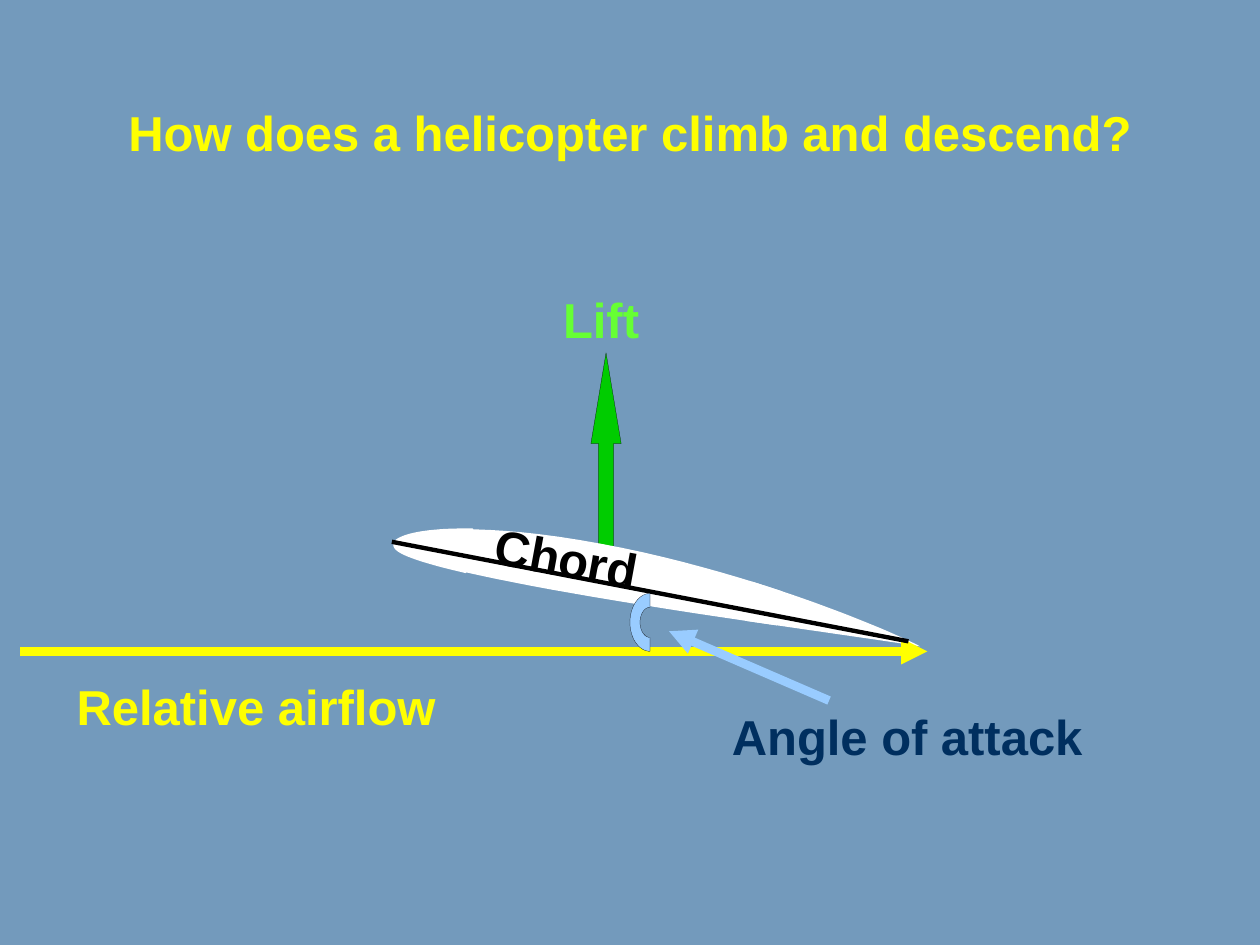
import math

import pptx
import pptx.util
import pptx.dml.color
import pptx.enum.shapes
import pptx.enum.text
import pptx.oxml
import pptx.oxml.ns

Inches = pptx.util.Inches
Pt = pptx.util.Pt
RGBColor = pptx.dml.color.RGBColor
MSO_SHAPE = pptx.enum.shapes.MSO_SHAPE

SKY = RGBColor(0x73, 0x9A, 0xBC)
YELLOW = RGBColor(0xFF, 0xFF, 0x00)
GREEN = RGBColor(0x00, 0xCC, 0x00)
LIME = RGBColor(0x66, 0xFF, 0x33)
WHITE = RGBColor(0xFF, 0xFF, 0xFF)
BLACK = RGBColor(0x00, 0x00, 0x00)
PALE_BLUE = RGBColor(0x99, 0xCC, 0xFF)
NAVY = RGBColor(0x00, 0x2F, 0x5F)

TITLE = "How does a helicopter climb and descend?"
LABEL_HEIGHT = 0.57
HAIRLINE = 0.1
LABELS = [
    ("Relative airflow", 0.51, 5.32, 3.23, YELLOW, 0),
    ("Angle of attack", 5.71, 5.56, 3.78, NAVY, 0),
    ("Chord", 3.82, 4.22, 2.2, BLACK, 10.4),
    ("Lift", 4.37, 2.25, 1.18, LIME, 0),
]
LINES = {
    "airflow": ((0.16, 5.17), (7.36, 5.17), YELLOW, 5, True),
    "chord": ((3.11, 4.3), (7.21, 5.09), BLACK, 2.5, False),
    "angle pointer": ((6.58, 5.56), (5.31, 5.01), PALE_BLUE, 5, True),
}

WING_ANGLE = 9.1
LEADING_EDGE = (3.13, 4.31)
WING_LENGTH = 4.25
TRAILING_DROP = 0.15
UPPER_SURFACE = {"scale": -0.88, "nose_power": 0.62, "tail_power": 0.92}
LOWER_SURFACE = {"scale": 0.28, "nose_power": 0.35, "tail_power": 1.15}
TAIL_SPAN = (0.67, 1)
MIDDLE_SPAN = (0.11, 0.73)
NOSE_SPAN = (0, 0.14)
WING_PARTS = [
    (TAIL_SPAN, {"fill": WHITE}),
    (MIDDLE_SPAN, {"fill": WHITE}),
    (NOSE_SPAN, {"fill": WHITE}),
    (NOSE_SPAN, {"line": WHITE, "width": 1}),
]

ARC_CENTER = (5.16, 4.94)
ARC_OUTER_RADII = (0.16, 0.23)
ARC_INNER_RADII = (0.08, 0.12)
CURVE_STEPS = 24


def paint(shape, fill=None, line=None, width=HAIRLINE):
    shape.shadow.inherit = False
    if fill is None:
        shape.fill.background()
    else:
        shape.fill.solid()
        shape.fill.fore_color.rgb = fill
    if line is None:
        shape.line.fill.background()
    else:
        shape.line.color.rgb = line
        shape.line.width = Pt(width)


def box(left, top, width, height):
    return [Inches(value) for value in (left, top, width, height)]


def write(shape, text, color):
    frame = shape.text_frame
    frame.text = text
    frame.word_wrap = True
    frame.auto_size = pptx.enum.text.MSO_AUTO_SIZE.SHAPE_TO_FIT_TEXT
    frame.vertical_anchor = pptx.enum.text.MSO_ANCHOR.TOP
    paragraph = frame.paragraphs[0]
    paragraph.space_before = Pt(0)
    font = paragraph.runs[0].font
    font.name, font.size, font.bold = "Arial", Pt(28), True
    font.color.rgb = color


def drawing_element(markup):
    namespace = pptx.oxml.ns.nsdecls("a")
    return pptx.oxml.parse_xml(f"<a:{markup} {namespace}/>")


def add_line(shapes, start, end, color, width, has_arrowhead):
    connector = shapes.add_connector(
        pptx.enum.shapes.MSO_CONNECTOR.STRAIGHT,
        *(Inches(value) for value in start + end))
    connector.line.color.rgb = color
    connector.line.width = Pt(width)
    if has_arrowhead:
        arrowhead = drawing_element("tailEnd")
        arrowhead.set("type", "triangle")
        connector.line._get_or_add_ln().append(arrowhead)
    connector._element.spPr.append(drawing_element("effectLst"))


def add_outline(shapes, points):
    corners = [(Inches(x), Inches(y)) for x, y in points]
    builder = shapes.build_freeform(*corners[0])
    builder.add_line_segments(corners[1:], close=True)
    return builder.convert_to_shape()


def surface_point(fraction, scale, nose_power, tail_power):
    bulge = scale * fraction ** nose_power * (1 - fraction) ** tail_power
    return WING_LENGTH * fraction, TRAILING_DROP * fraction + bulge


def wing_section(start, end):
    eased = [(1 - math.cos(math.pi * step / CURVE_STEPS)) / 2
             for step in range(CURVE_STEPS + 1)]
    fractions = [start + (end - start) * ease for ease in eased]
    upper = [surface_point(fraction, **UPPER_SURFACE) for fraction in fractions]
    lower = [surface_point(fraction, **LOWER_SURFACE) for fraction in fractions]
    return upper + lower[::-1]


def middle(values):
    return (min(values) + max(values)) / 2


def add_wing_part(shapes, span, style):
    section = wing_section(*span)
    along = middle([x for x, y in section])
    across = middle([y for x, y in section])
    angle = math.radians(WING_ANGLE)
    cosine, sine = math.cos(angle), math.sin(angle)
    center_x = LEADING_EDGE[0] + along * cosine - across * sine
    center_y = LEADING_EDGE[1] + along * sine + across * cosine
    level = [(center_x + x - along, center_y + y - across) for x, y in section]
    part = add_outline(shapes, level)
    part.rotation = WING_ANGLE
    paint(part, **style)


def left_half_ellipse(radii):
    angles = [math.pi * (0.5 + step / CURVE_STEPS)
              for step in range(CURVE_STEPS + 1)]
    return [(ARC_CENTER[0] + radii[0] * math.cos(angle),
             ARC_CENTER[1] + radii[1] * math.sin(angle)) for angle in angles]


def add_title(slide):
    title = slide.shapes.title
    title.left, title.top, title.width, title.height = box(0, 0.76, 10, LABEL_HEIGHT)
    write(title, TITLE, YELLOW)
    title.text_frame.paragraphs[0].alignment = pptx.enum.text.PP_ALIGN.CENTER


def add_lift_arrow(shapes):
    lift_arrow = shapes.add_shape(MSO_SHAPE.UP_ARROW, *box(4.69, 2.8, 0.24, 2.84))
    lift_arrow.adjustments[0] = 0.5
    lift_arrow.adjustments[1] = 3
    paint(lift_arrow, fill=GREEN, line=BLACK)
    arrow_cover = shapes.add_shape(MSO_SHAPE.RECTANGLE, *box(3.98, 4.62, 1.42, 1.73))
    paint(arrow_cover, fill=SKY)


def add_angle_arc(shapes):
    outer = left_half_ellipse(ARC_OUTER_RADII)
    inner = left_half_ellipse(ARC_INNER_RADII)
    paint(add_outline(shapes, outer + inner[::-1]), fill=PALE_BLUE, line=BLACK)


def main():
    presentation = pptx.Presentation()
    presentation.slide_width, presentation.slide_height = Inches(10), Inches(7.5)
    slide = presentation.slides.add_slide(presentation.slide_layouts[5])
    slide.background.fill.solid()
    slide.background.fill.fore_color.rgb = SKY
    shapes = slide.shapes

    add_title(slide)
    add_lift_arrow(shapes)
    wing = shapes.add_group_shape()
    for span, style in WING_PARTS:
        add_wing_part(wing.shapes, span, style)
    for line in LINES.values():
        add_line(shapes, *line)
    add_angle_arc(shapes)
    for text, left, top, width, color, rotation in LABELS:
        label = shapes.add_textbox(*box(left, top, width, LABEL_HEIGHT))
        write(label, text, color)
        label.rotation = rotation

    presentation.save("out.pptx")


if __name__ == "__main__":
    main()
